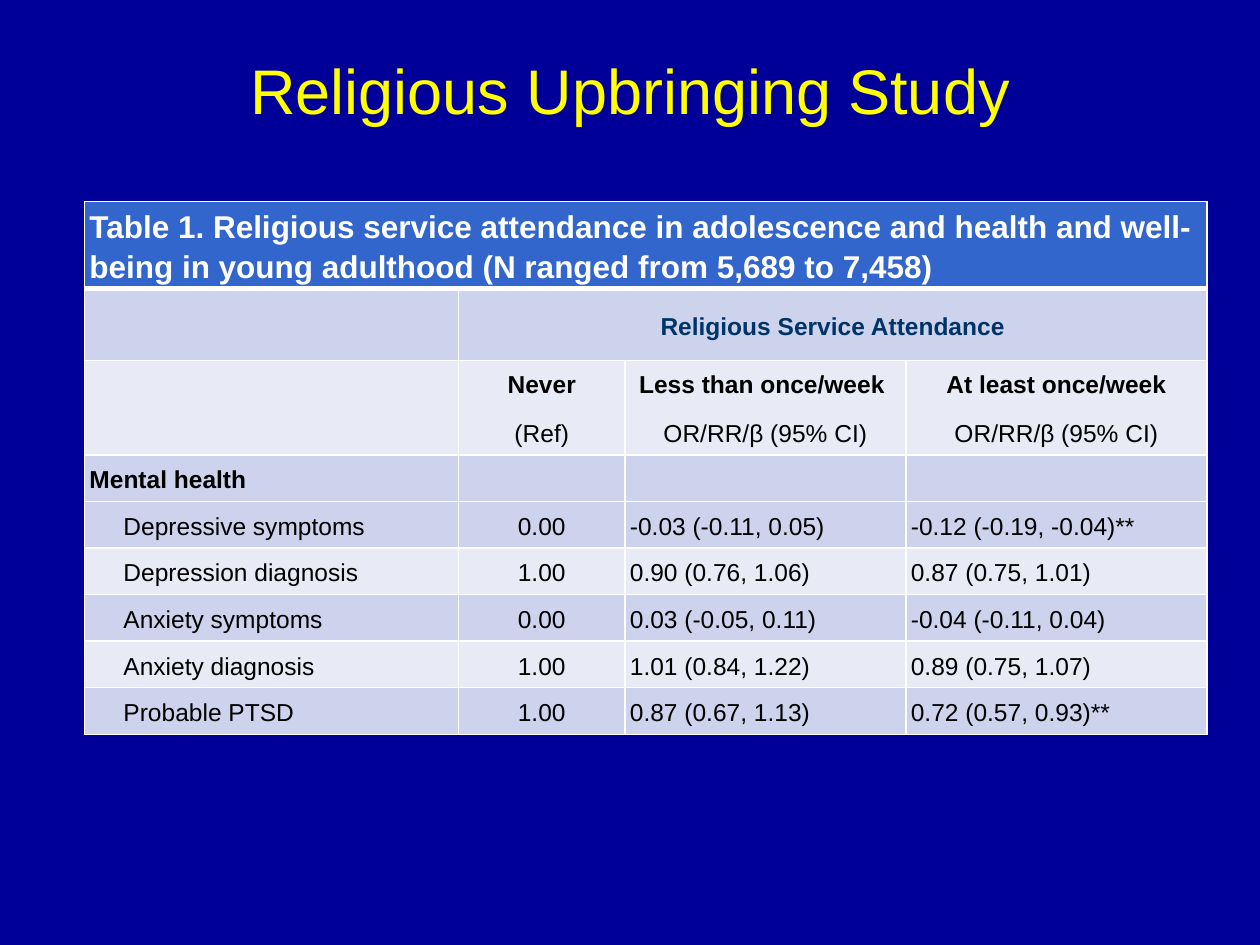
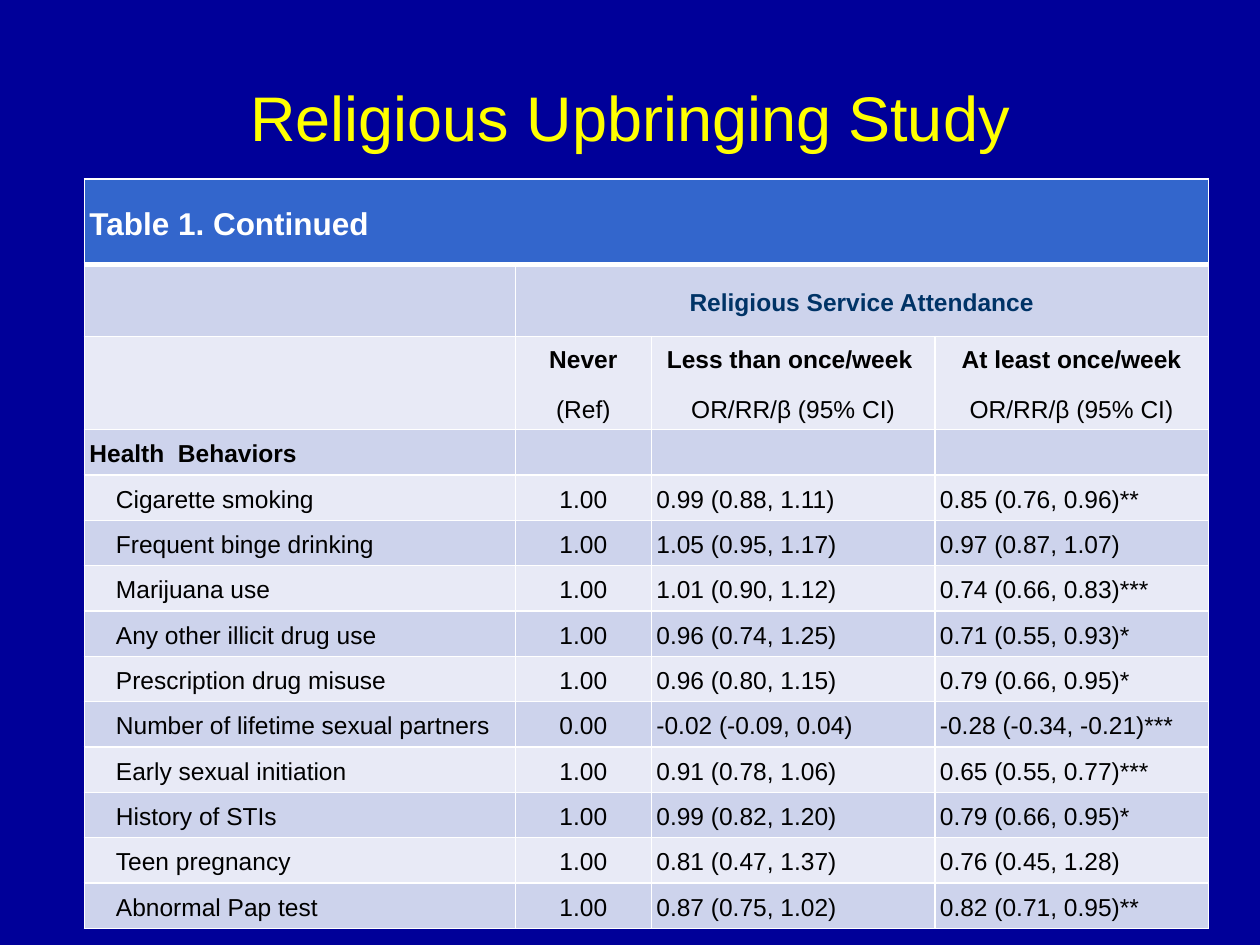
from lxml.etree import SubElement
from pptx import Presentation
from pptx.dml.color import RGBColor
from pptx.enum.text import MSO_ANCHOR as Anchor, PP_ALIGN as Align
from pptx.oxml.ns import qn
from pptx.util import Inches, Pt

NAVY = RGBColor(0x00, 0x00, 0x99)
YELLOW = RGBColor(0xFF, 0xFF, 0x00)
WHITE = RGBColor(0xFF, 0xFF, 0xFF)
BLACK = RGBColor(0x00, 0x00, 0x00)
BLUE = RGBColor(0x33, 0x66, 0xCC)
TEAL = RGBColor(0x00, 0x33, 0x66)
DARK = RGBColor(0xCD, 0xD3, 0xEC)
LIGHT = RGBColor(0xE8, 0xEA, 0xF6)

TITLE = "Religious Upbringing Study"
EFFECT = "OR/RR/β (95% CI)"
HEADS = [("Never", "(Ref)"), ("Less than once/week ", EFFECT), ("At least once/week", EFFECT)]

MENTAL = [
    ("Depressive symptoms", "0.00", "-0.03 (-0.11, 0.05)", "-0.12 (-0.19, -0.04)**"),
    ("Depression diagnosis", "1.00", "0.90 (0.76, 1.06)", "0.87 (0.75, 1.01)"),
    ("Anxiety symptoms", "0.00", "0.03 (-0.05, 0.11)", "-0.04 (-0.11, 0.04)"),
    ("Anxiety diagnosis", "1.00", "1.01 (0.84, 1.22)", "0.89 (0.75, 1.07)"),
    ("Probable PTSD", "1.00", "0.87 (0.67, 1.13)", "0.72 (0.57, 0.93)**"),
]
HABITS = [
    ("Cigarette smoking", "1.00", "0.99 (0.88, 1.11)", "0.85 (0.76, 0.96)**"),
    ("Frequent binge drinking", "1.00", "1.05 (0.95, 1.17)", "0.97 (0.87, 1.07)"),
    ("Marijuana use", "1.00", "1.01 (0.90, 1.12)", "0.74 (0.66, 0.83)***"),
    ("Any other illicit drug use", "1.00", "0.96 (0.74, 1.25)", "0.71 (0.55, 0.93)*"),
    ("Prescription drug misuse", "1.00", "0.96 (0.80, 1.15)", "0.79 (0.66, 0.95)*"),
    ("Number of lifetime sexual partners", "0.00", "-0.02 (-0.09, 0.04)", "-0.28 (-0.34, -0.21)***"),
    ("Early sexual initiation", "1.00", "0.91 (0.78, 1.06)", "0.65 (0.55, 0.77)***"),
    ("History of STIs", "1.00", "0.99 (0.82, 1.20)", "0.79 (0.66, 0.95)*"),
    ("Teen pregnancy", "1.00", "0.81 (0.47, 1.37)", "0.76 (0.45, 1.28)"),
    ("Abnormal Pap test", "1.00", "0.87 (0.75, 1.02)", "0.82 (0.71, 0.95)**"),
]


def write(para, text, size=14, color=BLACK, bold=False, align=Align.LEFT,
          line=1.15, before=0, after=0):
    para.alignment = align
    para.line_spacing = line
    para.space_before = Pt(before)
    para.space_after = Pt(after)
    run = para.add_run()
    run.text = text
    run.font.name = "Arial"
    run.font.size = Pt(size)
    run.font.bold = bold
    run.font.color.rgb = color


def edge(cell, side, width):
    line = SubElement(cell._tc.get_or_add_tcPr(), qn(f"a:ln{side}"), w=str(Pt(width)))
    fill = SubElement(line, qn("a:solidFill"))
    SubElement(fill, qn("a:srgbClr"), val=str(WHITE))


class Deck:
    def __init__(self):
        self.prs = Presentation()
        self.prs.slide_width = Inches(10)
        self.prs.slide_height = Inches(7.5)
        self.slide = None

    def page(self, top):
        self.slide = self.prs.slides.add_slide(self.prs.slide_layouts[6])
        fill = self.slide.background.fill
        fill.solid()
        fill.fore_color.rgb = NAVY
        box = self.slide.shapes.add_textbox(Inches(0.5), Inches(top), Inches(9), Inches(1.25))
        frame = box.text_frame
        frame.word_wrap = True
        frame.vertical_anchor = Anchor.MIDDLE
        write(frame.paragraphs[0], TITLE, size=36, color=YELLOW, align=Align.CENTER, line=1.0)

    def cell(self, cell, fill, row, indent=0):
        for side in "LRTB":
            thick = (row, side) in ((0, "B"), (1, "T"))
            edge(cell, side, 3 if thick else 1)
        cell.fill.solid()
        cell.fill.fore_color.rgb = fill
        cell.vertical_anchor = Anchor.MIDDLE
        cell.margin_left = Inches(0.04 + indent)
        cell.margin_right = Inches(0.04)
        cell.margin_top = cell.margin_bottom = 0

    def table(self, top, widths, heights, indent, caption, group, data):
        lead = len(heights)
        count = lead + len(data)
        tall = heights + [heights[-1]] * len(data)
        frame = self.slide.shapes.add_table(
            count, len(widths), Inches(0.67), Inches(top),
            Inches(sum(widths)), Inches(sum(tall)))
        grid = frame.table
        grid.horz_banding = False
        for col, width in zip(grid.columns, widths):
            col.width = Inches(width)
        for row, height in zip(grid.rows, tall):
            row.height = Inches(height)

        bands = [LIGHT if (len(data) - i) % 2 == 0 else DARK for i in range(len(data))]
        for i, fill in enumerate([BLUE, DARK, LIGHT, DARK] + bands):
            for j in range(len(widths)):
                self.cell(grid.cell(i, j), fill, i, indent if i >= lead and j == 0 else 0)
        grid.cell(0, 0).merge(grid.cell(0, 3))
        grid.cell(1, 1).merge(grid.cell(1, 3))

        def para(i, j):
            return grid.cell(i, j).text_frame.paragraphs[0]

        write(para(0, 0), caption, size=18, color=WHITE, bold=True, before=3, after=3)
        write(para(1, 1), "Religious Service Attendance", color=TEAL, bold=True,
              align=Align.CENTER, after=10)
        for j, (head, note) in enumerate(HEADS, 1):
            write(para(2, j), head, bold=True, align=Align.CENTER, after=10)
            write(grid.cell(2, j).text_frame.add_paragraph(), note,
                  align=Align.CENTER, after=10)
        write(para(3, 0), group, bold=True, before=3, after=3)
        for i, values in enumerate(data, lead):
            for j, value in enumerate(values):
                write(para(i, j), value, align=Align.CENTER if j == 1 else Align.LEFT)


def main():
    deck = Deck()
    deck.page(0.08)
    deck.table(1.6, [2.97, 1.32, 2.23, 2.39], [0.68, 0.57, 0.75, 0.37], 0.27,
               "Table 1. Religious service attendance in adolescence and health and "
               "well-being in young adulthood (N ranged from 5,689 to 7,458)",
               "Mental health", MENTAL)
    deck.page(0.3)
    deck.table(1.42, [3.42, 1.08, 2.25, 2.17], [0.68, 0.57, 0.74, 0.36], 0.21,
               "Table 1. Continued", "Health  Behaviors", HABITS)
    deck.prs.save("out.pptx")


if __name__ == "__main__":
    main()
